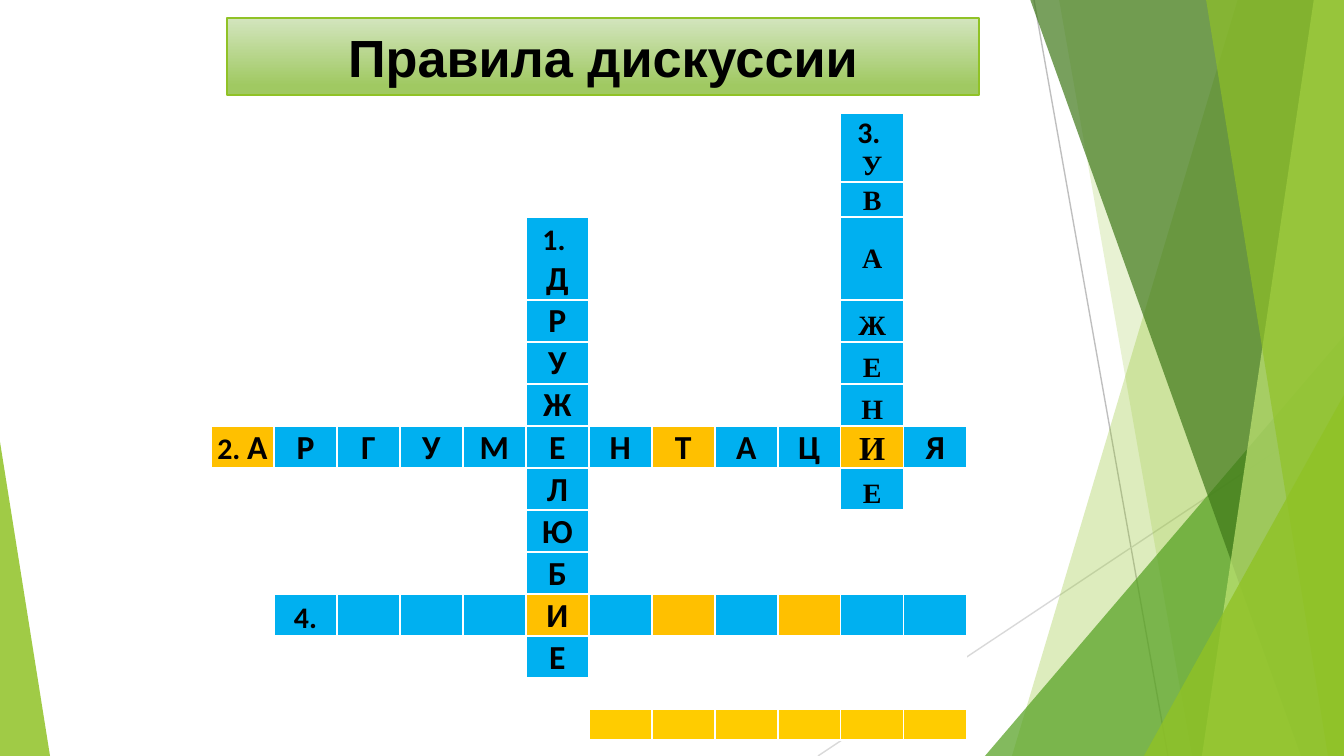
from lxml.etree import SubElement
from pptx import Presentation
from pptx.dml.color import RGBColor
from pptx.enum.shapes import MSO_CONNECTOR, MSO_SHAPE
from pptx.enum.text import MSO_ANCHOR, PP_ALIGN
from pptx.oxml.ns import qn
from pptx.util import Emu, Pt

SCALE = 914400 / 134.4  # EMU in one px
WIDTH, HEIGHT = 1344, 756

WHITE = RGBColor(0xFF, 0xFF, 0xFF)
BLACK = RGBColor(0x00, 0x00, 0x00)
BLUE = RGBColor(0x00, 0xB0, 0xF0)
GOLD = RGBColor(0xFF, 0xC0, 0x00)
YELLOW = RGBColor(0xFF, 0xCC, 0x00)
GREEN = RGBColor(0x90, 0xC2, 0x26)
MID_GREEN = RGBColor(0x54, 0xA0, 0x21)
DARK_GREEN = RGBColor(0x3F, 0x78, 0x19)
LIME = RGBColor(0xC0, 0xE4, 0x74)
TITLE_TOP = RGBColor(0xD3, 0xE5, 0xBE)
TITLE_BOTTOM = RGBColor(0xA0, 0xC9, 0x62)
GREY = RGBColor(0xBF, 0xBF, 0xBF)
LIGHT_GREY = RGBColor(0xD9, 0xD9, 0xD9)

# Crossword grid
COLUMNS = 12
COLUMN_WIDTH = 63
ROW_HEIGHTS = [69, 35, 83] + [42] * 9 + [31, 31]

# Words: letters, first row, first column, row step, column step, font, size
WORDS = [
    ("УВАЖЕНИЕ", 0, 10, 1, 0, "Times New Roman", 15),
    ("АРГУМЕНТАЦИЯ", 6, 0, 0, 1, "Calibri", 18),
    ("ДРУЖЕЛЮБИЕ", 2, 5, 1, 0, "Calibri", 18),
]
CROSSING = (6, 10)
STACKED_NUMBERS = {(0, 10): "3. ", (2, 5): "1. "}
INLINE_NUMBERS = {(6, 0): "2. ", (10, 1): "4."}
GOLD_CELLS = [(6, 0), (6, 7), CROSSING, (10, 5), (10, 7), (10, 9)]


def px(value):
    return Emu(round(value * SCALE))


def paint(shape, color, opacity):
    shape.shadow.inherit = False
    shape.fill.solid()
    shape.fill.fore_color.rgb = color
    shape.line.fill.background()
    color_element = shape.element.spPr.find(qn("a:solidFill"))[0]
    SubElement(color_element, qn("a:alpha"), val=str(opacity * 1000))


def add_line(slide, start, end, color):
    line = slide.shapes.add_connector(MSO_CONNECTOR.STRAIGHT, *map(px, start + end))
    line.line.color.rgb = color
    line.line.width = Pt(0.75)
    SubElement(line.element.spPr, qn("a:effectLst"))


def add_band(slide, top_x, bottom_x, color, opacity):
    """A slanted band that runs to the right edge of the slide."""
    builder = slide.shapes.build_freeform(top_x, -1, scale=SCALE)
    builder.add_line_segments([(WIDTH, -1), (WIDTH, HEIGHT), (bottom_x, HEIGHT)])
    paint(builder.convert_to_shape(), color, opacity)


def add_corner(slide, left, top, width, apex, color, opacity):
    """A right triangle that stands on the bottom edge."""
    triangle = slide.shapes.add_shape(
        MSO_SHAPE.ISOSCELES_TRIANGLE, px(left), px(top), px(width), px(HEIGHT - top))
    triangle.adjustments[0] = apex
    paint(triangle, color, opacity)


def add_background(slide):
    add_line(slide, (1034, 0), (1168, HEIGHT), GREY)
    add_line(slide, (WIDTH, 406), (818, HEIGHT), LIGHT_GREY)
    add_band(slide, 1238, 1012, GREEN, 30)
    add_band(slide, 1059, 1192, GREEN, 20)
    add_corner(slide, 985, 336, 359, 1, MID_GREEN, 72)
    add_band(slide, 1030, 1301, DARK_GREEN, 70)
    add_band(slide, 1314, 1202, LIME, 70)
    add_band(slide, 1206, 1328, GREEN, 65)
    add_corner(slide, 1144, 395, 200, 1, GREEN, 80)
    add_corner(slide, 0, 442, 50, 0, GREEN, 85)


def set_font(font, name, size):
    font.name, font.size, font.bold = name, Pt(size), True
    font.color.rgb = BLACK


def fill_title(title):
    title.left, title.top, title.width, title.height = map(px, (227, 18, 752, 77))
    title.fill.gradient()
    title.fill.gradient_angle = 270
    stops = title.fill.gradient_stops
    for stop, color, position in zip(stops, (TITLE_TOP, TITLE_BOTTOM), (0, 0.88)):
        stop.color.rgb = color
        stop.position = position
    title.line.color.rgb = GREEN
    title.line.width = Pt(1)
    frame = title.text_frame
    frame.text = "Правила дискуссии"
    frame.vertical_anchor = MSO_ANCHOR.MIDDLE
    frame.margin_left = frame.margin_right = px(7)
    frame.margin_top = frame.margin_bottom = px(3)
    paragraph = frame.paragraphs[0]
    paragraph.alignment = PP_ALIGN.CENTER
    set_font(paragraph.font, "Arial", 28)


def crossword_letters():
    letters = {}
    for word, row, column, row_step, column_step, font, size in WORDS:
        for index, letter in enumerate(word):
            place = (row + index * row_step, column + index * column_step)
            letters[place] = (letter, font, size)
    letters[CROSSING] = ("И", "Times New Roman", 18)
    return letters


def crossword_colors(letters):
    colors = dict.fromkeys(letters, BLUE)
    colors.update({(10, column): BLUE for column in range(1, COLUMNS)})
    colors.update(dict.fromkeys(GOLD_CELLS, GOLD))
    colors.update({(13, column): YELLOW for column in range(6, COLUMNS)})
    return colors


def format_cell(cell, color):
    cell.margin_left = cell.margin_right = cell.margin_top = px(1)
    cell.margin_bottom = 0
    cell.vertical_anchor = MSO_ANCHOR.BOTTOM
    properties = cell._tc.get_or_add_tcPr()
    for side in ("a:lnL", "a:lnR", "a:lnT", "a:lnB"):
        border = SubElement(properties, qn(side), w=str(Pt(1)))
        border_fill = SubElement(border, qn("a:solidFill"))
        SubElement(border_fill, qn("a:srgbClr"), val=str(WHITE))
    cell.fill.solid()
    cell.fill.fore_color.rgb = color


def write_cell(cell, lines):
    """Each line is a list of (text, font, size) runs."""
    frame = cell.text_frame
    for index, runs in enumerate(lines):
        paragraph = frame.add_paragraph() if index else frame.paragraphs[0]
        paragraph.alignment = PP_ALIGN.CENTER
        for text, font, size in runs:
            run = paragraph.add_run()
            run.text = text
            set_font(run.font if len(runs) > 1 else paragraph.font, font, size)
    if not lines:
        # Small type keeps an empty cell from stretching its row
        SubElement(frame.paragraphs[0]._p, qn("a:endParaRPr"), sz="1000")


def cell_lines(place, letters):
    lines = [[letters[place]]] if place in letters else []
    if place in STACKED_NUMBERS:
        lines.insert(0, [(STACKED_NUMBERS[place], "Calibri", 16)])
    elif place in INLINE_NUMBERS:
        number = (INLINE_NUMBERS[place], "Calibri", 16)
        lines = [[number] + (lines[0] if lines else [])]
    return lines


def add_crossword(slide):
    letters = crossword_letters()
    colors = crossword_colors(letters)
    table = slide.shapes.add_table(
        len(ROW_HEIGHTS), COLUMNS, px(211), px(113),
        px(COLUMNS * COLUMN_WIDTH), px(sum(ROW_HEIGHTS))).table
    table.first_row = table.horz_banding = False
    for column in table.columns:
        column.width = px(COLUMN_WIDTH)
    for row, height in enumerate(ROW_HEIGHTS):
        table.rows[row].height = px(height)
        for column in range(COLUMNS):
            place = (row, column)
            cell = table.cell(row, column)
            format_cell(cell, colors.get(place, WHITE))
            write_cell(cell, cell_lines(place, letters))
    # The letter in the tall cell sits in its middle
    table.cell(2, 10).vertical_anchor = MSO_ANCHOR.MIDDLE


def main():
    presentation = Presentation()
    presentation.slide_width, presentation.slide_height = px(WIDTH), px(HEIGHT)
    slide = presentation.slides.add_slide(presentation.slide_layouts[5])
    add_background(slide)
    fill_title(slide.shapes.title)
    add_crossword(slide)
    presentation.save("out.pptx")


if __name__ == "__main__":
    main()
